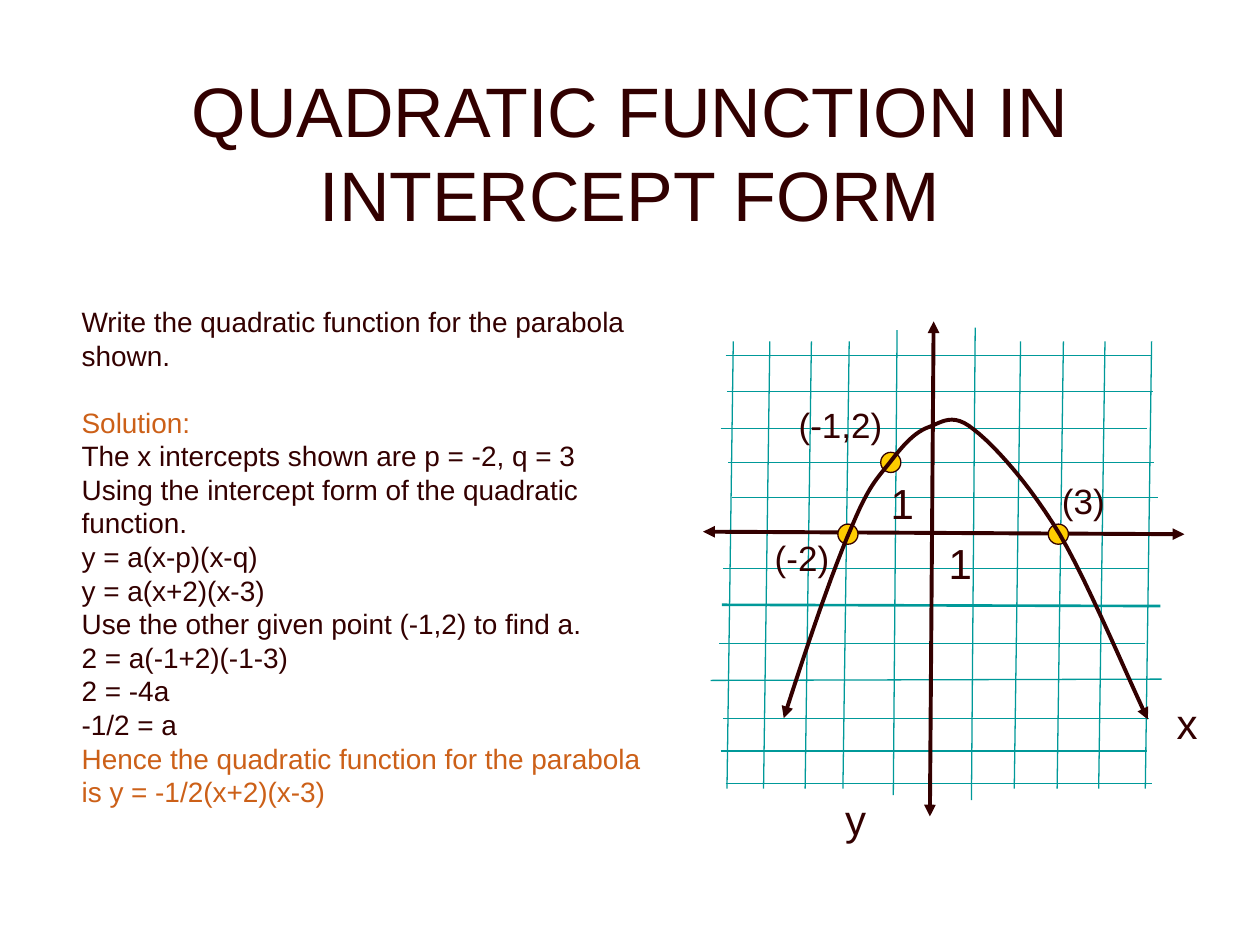
from pptx import Presentation
from pptx.dml.color import RGBColor
from pptx.enum.shapes import MSO_CONNECTOR, MSO_SHAPE
from pptx.enum.text import MSO_ANCHOR, MSO_AUTO_SIZE, PP_ALIGN
from pptx.oxml.ns import qn
from pptx.util import Inches, Pt
from lxml.etree import SubElement

DARK = RGBColor(0x33, 0x00, 0x00)
TITLE_DARK = RGBColor(0x32, 0x00, 0x00)
TEAL = RGBColor(0x00, 0x99, 0x99)
YELLOW = RGBColor(0xFF, 0xCC, 0x00)
ORANGE = RGBColor(0xCC, 0x60, 0x18)

prs = Presentation()
prs.slide_width, prs.slide_height = Inches(10), Inches(7.5)
slide = prs.slides.add_slide(prs.slide_layouts[5])
shapes = slide.shapes


def add_line(x1, y1, x2, y2, color=TEAL, width=0.75):
    line = shapes.add_connector(MSO_CONNECTOR.STRAIGHT, Inches(x1), Inches(y1),
                                Inches(x2), Inches(y2))
    line.line.color.rgb = color
    line.line.width = Pt(width)
    SubElement(line._element.spPr, qn("a:effectLst"))
    return line


def add_run(paragraph, text, size, color):
    run = paragraph.add_run()
    run.text = text
    run.font.name = "Arial"
    run.font.size = Pt(size)
    run.font.color.rgb = color


# Title
title = shapes.title
title.left, title.top = Inches(0.75), Inches(0.58)
title.width, title.height = Inches(8.5), Inches(1.25)
title.text_frame.vertical_anchor = MSO_ANCHOR.MIDDLE
heading = title.text_frame.paragraphs[0]
heading.alignment = PP_ALIGN.CENTER
add_run(heading, "QUADRATIC FUNCTION IN INTERCEPT FORM", 40, TITLE_DARK)

# Grid: slightly slanted verticals, then horizontals of equal length
for x in (5.82, 6.11, 6.44, 6.74, 8.1, 8.44, 8.77, 9.14):
    add_line(x, 2.71, x - 0.05, 6.26)
add_line(7.12, 2.62, 7.09, 6.31)
add_line(7.74, 2.6, 7.71, 6.35)

for x, y in ((5.76, 2.82), (5.77, 3.11), (5.72, 3.4), (5.78, 3.67),
             (5.81, 3.95), (5.74, 4.51), (5.71, 5.11), (5.74, 5.7),
             (5.72, 5.96), (5.76, 6.22)):
    add_line(x, y, x + 3.38, y)
add_line(5.64, 5.4, 9.22, 5.39)
add_line(5.73, 4.8, 9.21, 4.81, width=1.5)

# Axes
y_axis = add_line(7.41, 2.55, 7.38, 6.48, DARK, 2.25)
x_axis = add_line(5.58, 4.22, 9.4, 4.24, DARK, 2.25)

# Given points
for x, y in ((6.65, 4.16), (6.99, 3.59), (8.32, 4.16)):
    point = shapes.add_shape(MSO_SHAPE.OVAL, Inches(x), Inches(y),
                             Inches(0.16), Inches(0.16))
    point.shadow.inherit = False
    point.fill.solid()
    point.fill.fore_color.rgb = YELLOW
    point.line.color.rgb = DARK
    point.line.width = Pt(0.75)

# Point, axis and unit labels
for text, x, y, width, height, size in (
        ("(-1,2)", 6.24, 3.15, 0.95, 0.43, 20),
        ("(-2)", 6.05, 4.21, 0.88, 0.43, 20),
        ("(3)", 8.33, 3.76, 0.6, 0.43, 20),
        ("x", 9.24, 5.49, 0.4, 0.5, 24),
        ("y", 6.61, 6.25, 0.4, 0.5, 24),
        ("1", 6.97, 3.74, 0.4, 0.5, 24),
        ("1", 7.43, 4.22, 0.4, 0.5, 24)):
    label = shapes.add_textbox(Inches(x), Inches(y), Inches(width), Inches(height))
    label.text_frame.word_wrap = True
    label.text_frame.auto_size = MSO_AUTO_SIZE.SHAPE_TO_FIT_TEXT
    add_run(label.text_frame.paragraphs[0], text, size, DARK)

# Parabola: cubic Bezier pieces (two controls and an end), sampled finely
STEPS = 12
start = (6.22, 5.7)
pieces = [
    ((6.41, 5.11), (6.61, 4.52), (6.76, 4.18)),
    ((6.9, 3.84), (6.97, 3.79), (7.07, 3.66)),
    ((7.17, 3.53), (7.26, 3.43), (7.37, 3.39)),
    ((7.48, 3.35), (7.56, 3.27), (7.73, 3.41)),
    ((7.91, 3.55), (8.18, 3.86), (8.41, 4.24)),
    ((8.64, 4.63), (8.99, 5.47), (9.11, 5.71)),
]
curve_points = []
piece_start = start
for control1, control2, end in pieces:
    for step in range(1, STEPS + 1):
        t = step / STEPS
        u = 1 - t
        curve_points.append(tuple(
            Inches(u**3 * a + 3 * u**2 * t * b + 3 * u * t**2 * c + t**3 * d)
            for a, b, c, d in zip(piece_start, control1, control2, end)))
    piece_start = end
builder = shapes.build_freeform(Inches(start[0]), Inches(start[1]))
builder.add_line_segments(curve_points, close=False)
parabola = builder.convert_to_shape()
parabola.shadow.inherit = False
parabola.fill.background()
parabola.line.color.rgb = DARK
parabola.line.width = Pt(2.25)

# Arrowheads at both ends of the axes and the parabola
for arrow in (y_axis, x_axis, parabola):
    outline = arrow.line._get_or_add_ln()
    for end_tag in ("a:headEnd", "a:tailEnd"):
        SubElement(outline, qn(end_tag), type="triangle")

# Worked solution
solution = shapes.add_textbox(Inches(0.55), Inches(2.37), Inches(4.84), Inches(4.11))
frame = solution.text_frame
frame.word_wrap = True
frame.auto_size = MSO_AUTO_SIZE.SHAPE_TO_FIT_TEXT
steps = [
    ("Write the quadratic function for the parabola shown.", DARK),
    ("Solution:", ORANGE),
    ("The x intercepts shown are p = -2, q = 3", DARK),
    ("Using the intercept form of the quadratic function.", DARK),
    ("y = a(x-p)(x-q)", DARK),
    ("y = a(x+2)(x-3)", DARK),
    ("Use the other given point (-1,2) to find a.", DARK),
    ("2 = a(-1+2)(-1-3)", DARK),
    ("2 = -4a", DARK),
    ("-1/2 = a", DARK),
    ("Hence the quadratic function for the parabola is y = -1/2(x+2)(x-3)", ORANGE),
]
for i, (text, color) in enumerate(steps):
    paragraph = frame.add_paragraph() if i else frame.paragraphs[0]
    if text == "Solution:":
        paragraph.space_before = Pt(19)
    add_run(paragraph, text, 16, color)

prs.save("out.pptx")
